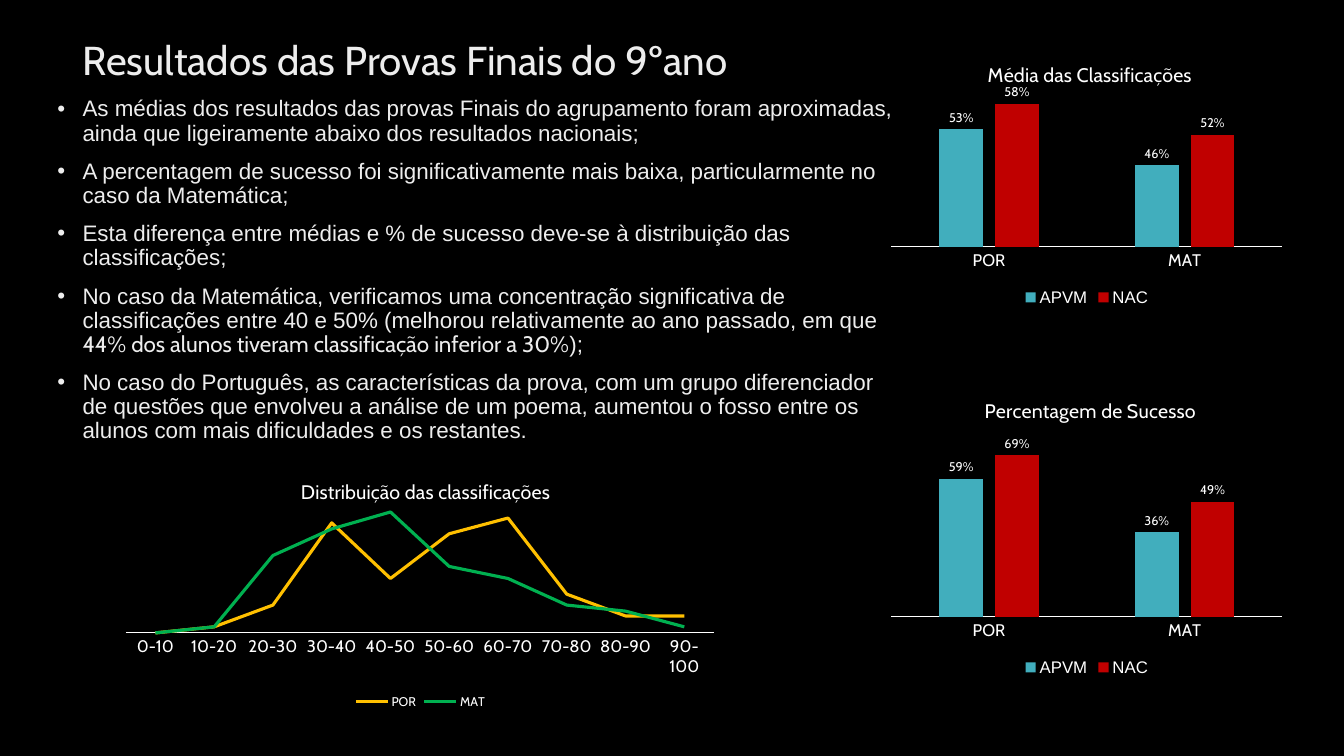
from lxml import etree
from pptx import Presentation
from pptx.chart.data import CategoryChartData
from pptx.dml.color import RGBColor
from pptx.enum.chart import XL_CHART_TYPE, XL_LABEL_POSITION, XL_LEGEND_POSITION, XL_TICK_MARK
from pptx.enum.text import MSO_ANCHOR, MSO_AUTO_SIZE, PP_ALIGN
from pptx.oxml import parse_xml
from pptx.oxml.ns import nsdecls, qn
from pptx.util import Inches, Pt

COLUMN = XL_CHART_TYPE.COLUMN_CLUSTERED
LINE = XL_CHART_TYPE.LINE
OUTSIDE_END = XL_LABEL_POSITION.OUTSIDE_END
BOTTOM = XL_LEGEND_POSITION.BOTTOM
NO_TICK = XL_TICK_MARK.NONE
BLACK, WHITE, LIGHT = "000000", "FFFFFF", "EDEDED"

TITLE = "Resultados das Provas Finais do 9ºano"

# Each bullet is a list of (text, font)
BULLETS = [
    [("As médias dos resultados das provas Finais do agrupamento foram aproximadas, "
      "ainda que ligeiramente abaixo dos resultados nacionais;", "Arial")],
    [("A percentagem de sucesso foi significativamente mais baixa, particularmente no "
      "caso da Matemática;", "Arial")],
    [("Esta diferença entre médias e % de sucesso deve-se à distribuição das "
      "classificações;", "Arial")],
    [("No caso da Matemática, verificamos uma concentração significativa de classificações "
      "entre 40 e 50% (melhorou relativamente ao ano passado, em que ", "Arial"),
     ("44% dos alunos tiveram classificação inferior a 30%", "Cabin"),
     (");", "Arial")],
    [("No caso do Português, as características da prova, com um grupo diferenciador de "
      "questões que envolveu a análise de um poema, aumentou o fosso entre os alunos com "
      "mais dificuldades e os restantes.", "Arial")],
]

SUBJECTS = ["POR", "MAT"]
BANDS = [f"{low}-{low + 10}" for low in range(0, 100, 10)]

# box and plot are left, top, width, height; title_at is left, top (inches on the slide)
CHARTS = [
    dict(kind=COLUMN, title="Média das Classificações", box=(8.76, 0.43, 4.04, 2.65),
         plot=(8.84, 0.93, 3.88, 1.52), title_at=(9.76, 0.57), scale=(0.3, 0.6),
         cats=SUBJECTS, legend_font=("Arial", 12),
         series=[("APVM", [0.53, 0.46], "41AEBD"), ("NAC", [0.58, 0.52], "C00000")]),
    dict(kind=COLUMN, title="Percentagem de Sucesso", box=(8.76, 3.75, 4.04, 3),
         plot=(8.84, 4.26, 3.88, 1.86), title_at=(9.73, 3.91), scale=(0, 0.8),
         cats=SUBJECTS, legend_font=("Arial", 12),
         series=[("APVM", [0.59, 0.36], "41AEBD"), ("NAC", [0.69, 0.49], "C00000")]),
    dict(kind=LINE, title="Distribuição das classificações", box=(1.13, 4.42, 6.08, 2.66),
         plot=(1.25, 5.08, 5.83, 1.2), title_at=(2.95, 4.71), scale=(0, 100),
         cats=BANDS, legend_font=("Cabin", 9),
         series=[("POR", [0, 5, 23, 91, 45, 82, 95, 32, 14, 14], "FFC000"),
                 ("MAT", [0, 5, 64, 86, 100, 55, 45, 23, 18, 5], "00B050")]),
]


def rgb(value):
    return RGBColor.from_string(value)


def style(font, name, size, color=WHITE):
    font.name, font.size, font.bold = name, Pt(size), False
    font.color.rgb = rgb(color)


def add_run(p, text, name="Cabin", size=16, color=LIGHT):
    r = p.add_run()
    r.text = text
    style(r.font, name, size, color)


def add_bullet(p):
    pPr = p._p.get_or_add_pPr()
    pPr.set("marL", str(Inches(0.25)))
    pPr.set("indent", str(Inches(-0.25)))
    etree.SubElement(pPr, qn("a:buFont")).set("typeface", "Arial")
    etree.SubElement(pPr, qn("a:buChar")).set("char", "•")


def place(parent, box, at, inner=False):
    """Fix a chart part at slide position `at`, as fractions of the chart box."""
    left, top, width, height = box
    fractions = [(at[0] - left) / width, (at[1] - top) / height]
    fractions += [length / whole for length, whole in zip(at[2:], (width, height))]
    target = '<c:layoutTarget val="inner"/>' if inner else ""
    modes = '<c:xMode val="edge"/><c:yMode val="edge"/>'
    values = "".join(f'<c:{key} val="{v:.4f}"/>' for key, v in zip("xywh", fractions))
    for old in parent.findall(qn("c:layout")):
        parent.remove(old)
    layout = parse_xml(f'<c:layout {nsdecls("c")}><c:manualLayout>{target}{modes}{values}'
                       '</c:manualLayout></c:layout>')
    parent.insert(1 if parent.find(qn("c:tx")) is not None else 0, layout)


def add_chart(s, kind, title, box, plot, title_at, scale, cats, legend_font, series):
    columns = kind == COLUMN
    data = CategoryChartData(number_format="0%" if columns else "General")
    data.categories = cats
    for name, values, _ in series:
        data.add_series(name, values)
    chart = s.shapes.add_chart(kind, *map(Inches, box), data).chart
    style(chart.font, "Cabin", 10)

    chart.has_title = True
    add_run(chart.chart_title.text_frame.paragraphs[0], title, size=14, color=WHITE)
    chart.chart_title.include_in_layout = False
    place(chart.chart_title._element, box, title_at)
    place(chart._chartSpace.chart.plotArea, box, plot, inner=True)

    chart.has_legend = True
    chart.legend.position = BOTTOM
    chart.legend.include_in_layout = False
    style(chart.legend.font, *legend_font)

    axis = chart.category_axis
    axis.major_tick_mark = axis.minor_tick_mark = NO_TICK
    axis.format.line.color.rgb = rgb(WHITE)
    axis.format.line.width = Pt(0.75)
    style(axis.tick_labels.font, "Cabin", 12)
    values_axis = chart.value_axis
    values_axis.has_major_gridlines = False
    values_axis.minimum_scale, values_axis.maximum_scale = scale
    values_axis.visible = False

    group = chart.plots[0]
    group.vary_by_categories = False
    if columns:
        group.gap_width, group.overlap = 219, -27
    for ser, (_, _, color) in zip(group.series, series):
        if columns:
            ser.format.fill.solid()
            ser.format.fill.fore_color.rgb = rgb(color)
            labels = ser.data_labels
            labels.show_value = True
            labels.number_format, labels.number_format_is_linked = "0%", False
            labels.position = OUTSIDE_END
            style(labels.font, "Cabin", 9)
        else:
            ser.smooth = False
            ser.format.line.color.rgb = rgb(color)
            ser.format.line.width = Pt(2.25)


prs = Presentation()
prs.slide_width, prs.slide_height = Inches(13.33), Inches(7.5)
s = prs.slides.add_slide(prs.slide_layouts[5])
s.background.fill.solid()
s.background.fill.fore_color.rgb = rgb(BLACK)

title = s.shapes.title
title.left, title.top, title.width, title.height = map(Inches, (0.72, 0.31, 6.91, 0.61))
tf = title.text_frame
tf.auto_size, tf.vertical_anchor = MSO_AUTO_SIZE.NONE, MSO_ANCHOR.MIDDLE
p = tf.paragraphs[0]
p.alignment, p.line_spacing = PP_ALIGN.LEFT, 0.9
add_run(p, TITLE, size=28.8)

tf = s.shapes.add_textbox(*map(Inches, (0.47, 0.92, 8.49, 3.6))).text_frame
tf.word_wrap = True
for i, runs in enumerate(BULLETS):
    p = tf.add_paragraph() if i else tf.paragraphs[0]
    p.line_spacing = 0.9
    p.space_before = Pt(10 if i else 0)
    add_bullet(p)
    for text, font_name in runs:
        add_run(p, text, font_name)

for chart_spec in CHARTS:
    add_chart(s, **chart_spec)

prs.save("out.pptx")
